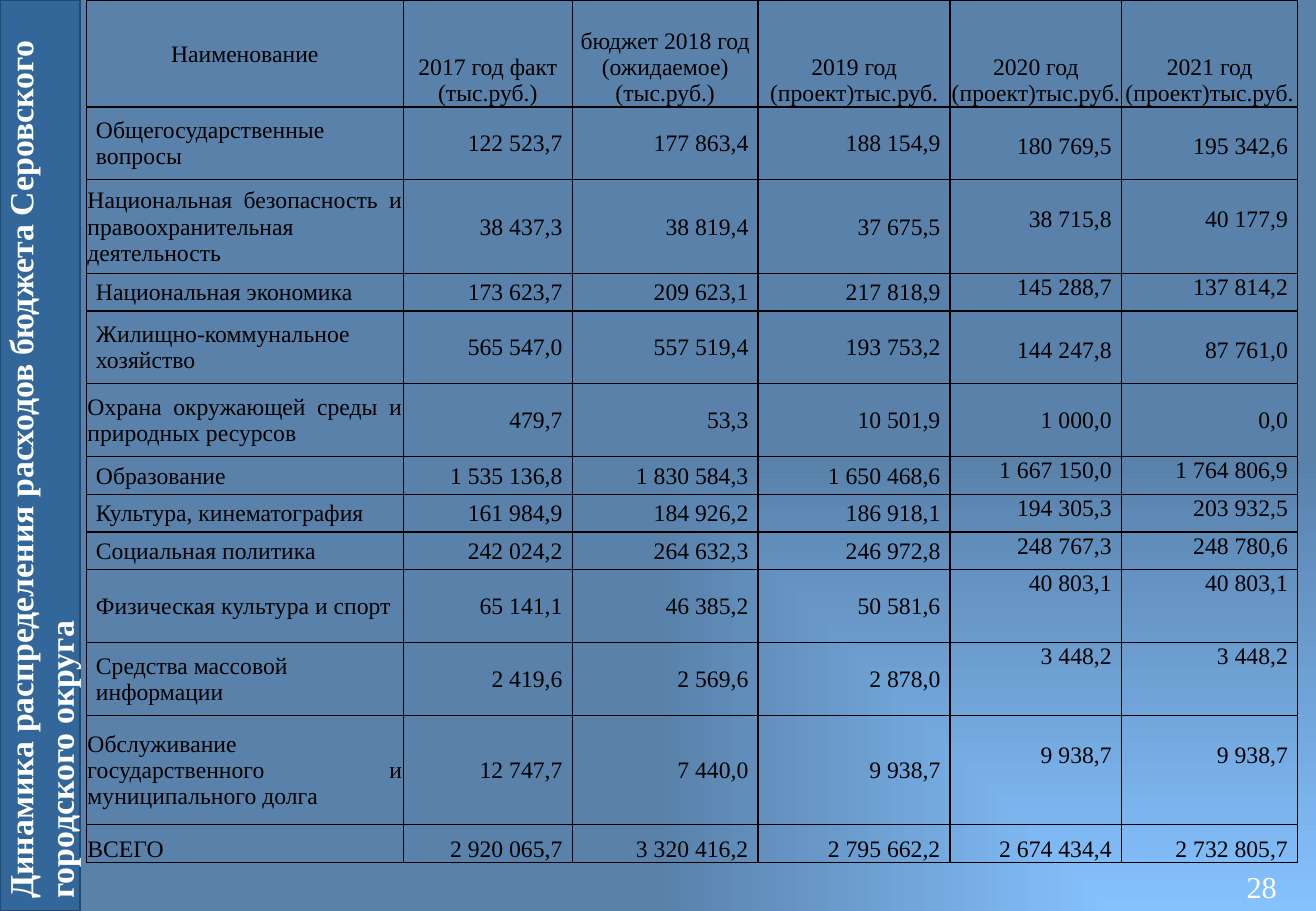
"""Build the slide with the expenditure table of the Serov district budget."""
from pptx import Presentation
from pptx.dml.color import RGBColor
from pptx.enum.text import MSO_ANCHOR as Anchor, MSO_AUTO_SIZE as AutoSize, PP_ALIGN as Align
from pptx.oxml.ns import qn
from pptx.oxml.xmlchemy import OxmlElement
from pptx.util import Inches, Pt

COLORS = {"light": "85C2FF", "dark": "5981AA", "band": "336699",
          "band_line": "23496F", "text": "000000", "white": "FFFFFF"}
FONT = "Times New Roman"
TITLE = "Динамика распределения расходов бюджета Серовского городского округа"
PAGE = "28"
HEADER = ["Наименование", "2017 год факт (тыс.руб.)",
          "бюджет 2018 год (ожидаемое) (тыс.руб.)", "2019 год (проект)тыс.руб.",
          "2020 год (проект)тыс.руб.", "2021 год (проект)тыс.руб."]
ROWS = [
    ["Общегосударственные вопросы", "122 523,7", "177 863,4", "188 154,9", "180 769,5", "195 342,6"],
    ["Национальная безопасность и правоохранительная деятельность",
     "38 437,3", "38 819,4", "37 675,5", "38 715,8", "40 177,9"],
    ["Национальная экономика", "173 623,7", "209 623,1", "217 818,9", "145 288,7", "137 814,2"],
    ["Жилищно-коммунальное хозяйство", "565 547,0", "557 519,4", "193 753,2", "144 247,8", "87 761,0"],
    ["Охрана окружающей среды и природных ресурсов", "479,7", "53,3", "10 501,9", "1 000,0", "0,0"],
    ["Образование", "1 535 136,8", "1 830 584,3", "1 650 468,6", "1 667 150,0", "1 764 806,9"],
    ["Культура, кинематография", "161 984,9", "184 926,2", "186 918,1", "194 305,3", "203 932,5"],
    ["Социальная политика", "242 024,2", "264 632,3", "246 972,8", "248 767,3", "248 780,6"],
    ["Физическая культура и спорт", "65 141,1", "46 385,2", "50 581,6", "40 803,1", "40 803,1"],
    ["Средства массовой информации", "2 419,6", "2 569,6", "2 878,0", "3 448,2", "3 448,2"],
    ["Обслуживание государственного и муниципального долга",
     "12 747,7", "7 440,0", "9 938,7", "9 938,7", "9 938,7"],
    ["ВСЕГО", "2 920 065,7", "3 320 416,2", "2 795 662,2", "2 674 434,4", "2 732 805,7"],
]
COL_WIDTHS = [2.61, 1.39, 1.53, 1.58, 1.41, 1.45]
ROW_HEIGHTS = [0.88, 0.6, 0.77, 0.31, 0.6, 0.6, 0.31, 0.31, 0.31, 0.6, 0.6, 0.9, 0.31]
TOTAL = len(ROWS)
JUSTIFIED = {2, 5, 11}
LOWERED = {1, 2, 4, 11}
CENTERED_FORECAST = {5}
THIN, WIDE, LINE = 0.01, 0.08, 0.21


def color(name):
    return RGBColor.from_string(COLORS[name])


def style(p, size, name, bold=False):
    for r in p.runs:
        r.font.name, r.font.size, r.font.bold = FONT, Pt(size), bold
        r.font.color.rgb = color(name)


def add_background(s):
    fill = s.background.fill
    fill.gradient()
    for stop, name, position in zip(fill.gradient_stops, ("light", "dark"), (0, 1)):
        stop.color.rgb = color(name)
        stop.position = position
    grad = next(s.element.iter(qn("a:gradFill")))
    grad.remove(grad.find(qn("a:lin")))
    shade = OxmlElement("a:path")
    shade.set("path", "rect")
    focus = OxmlElement("a:fillToRect")
    focus.set("l", "100000")
    focus.set("t", "100000")
    shade.append(focus)
    grad.append(shade)


def add_title(s):
    sp = s.shapes.title
    sp.left, sp.top, sp.width, sp.height = map(Inches, (-3.42, 3.42, 7.5, 0.66))
    sp.rotation = 270
    sp.fill.solid()
    sp.fill.fore_color.rgb = color("band")
    sp.line.color.rgb = color("band_line")
    sp.line.width = Pt(1)
    tf = sp.text_frame
    tf.text = TITLE
    tf.word_wrap, tf.auto_size, tf.vertical_anchor = True, AutoSize.NONE, Anchor.MIDDLE
    tf.paragraphs[0].alignment = Align.LEFT
    style(tf.paragraphs[0], 20, "white", True)


def cell_layout(row, col):
    """Return anchor, alignment and left, top and right margins of a cell."""
    if row == 0:
        return (Anchor.BOTTOM if col else Anchor.MIDDLE), Align.CENTER, (THIN, THIN, THIN)
    anchor = Anchor.BOTTOM if row == TOTAL else Anchor.MIDDLE
    if col == 0:
        align = Align.JUSTIFY if row in JUSTIFIED else Align.LEFT
        left = THIN if row in JUSTIFIED or row == TOTAL else WIDE
        return anchor, align, (left, THIN, THIN)
    top = THIN
    if col > 3 and row != TOTAL and row not in CENTERED_FORECAST:
        anchor = Anchor.TOP
        top += LINE if row in LOWERED else 0
    return anchor, Align.RIGHT, (THIN, top, WIDE)


def add_borders(cell):
    tc_pr = cell._tc.get_or_add_tcPr()
    for side in "LRTB":
        ln = OxmlElement(f"a:ln{side}")
        ln.set("w", str(Pt(1)))
        fill = OxmlElement("a:solidFill")
        rgb = OxmlElement("a:srgbClr")
        rgb.set("val", COLORS["text"])
        fill.append(rgb)
        ln.append(fill)
        tc_pr.append(ln)


def add_budget_table(s):
    data = [HEADER] + ROWS
    table = s.shapes.add_table(len(data), len(HEADER), Inches(0.71), 0,
                               Inches(sum(COL_WIDTHS)), Inches(sum(ROW_HEIGHTS))).table
    table.first_row = table.horz_banding = False
    for column, width in zip(table.columns, COL_WIDTHS):
        column.width = Inches(width)
    for row, height in zip(table.rows, ROW_HEIGHTS):
        row.height = Inches(height)
    for i, values in enumerate(data):
        for j, value in enumerate(values):
            cell = table.cell(i, j)
            anchor, align, margins = cell_layout(i, j)
            cell.text = value
            cell.vertical_anchor = anchor
            cell.margin_left, cell.margin_top, cell.margin_right = map(Inches, margins)
            cell.margin_bottom = 0
            p = cell.text_frame.paragraphs[0]
            p.alignment = align
            style(p, 14, "text")
            add_borders(cell)
            cell.fill.background()


def add_page_number(s):
    tf = s.shapes.add_textbox(*map(Inches, (10.16, 7.1, 0.45, 0.4))).text_frame
    tf.text = PAGE
    tf.word_wrap, tf.auto_size = False, AutoSize.SHAPE_TO_FIT_TEXT
    style(tf.paragraphs[0], 18, "white")


def main():
    prs = Presentation()
    prs.slide_width, prs.slide_height = Inches(10.83), Inches(7.5)
    s = prs.slides.add_slide(prs.slide_layouts[5])
    add_background(s)
    add_page_number(s)
    add_title(s)
    add_budget_table(s)
    prs.save("out.pptx")


if __name__ == "__main__":
    main()
